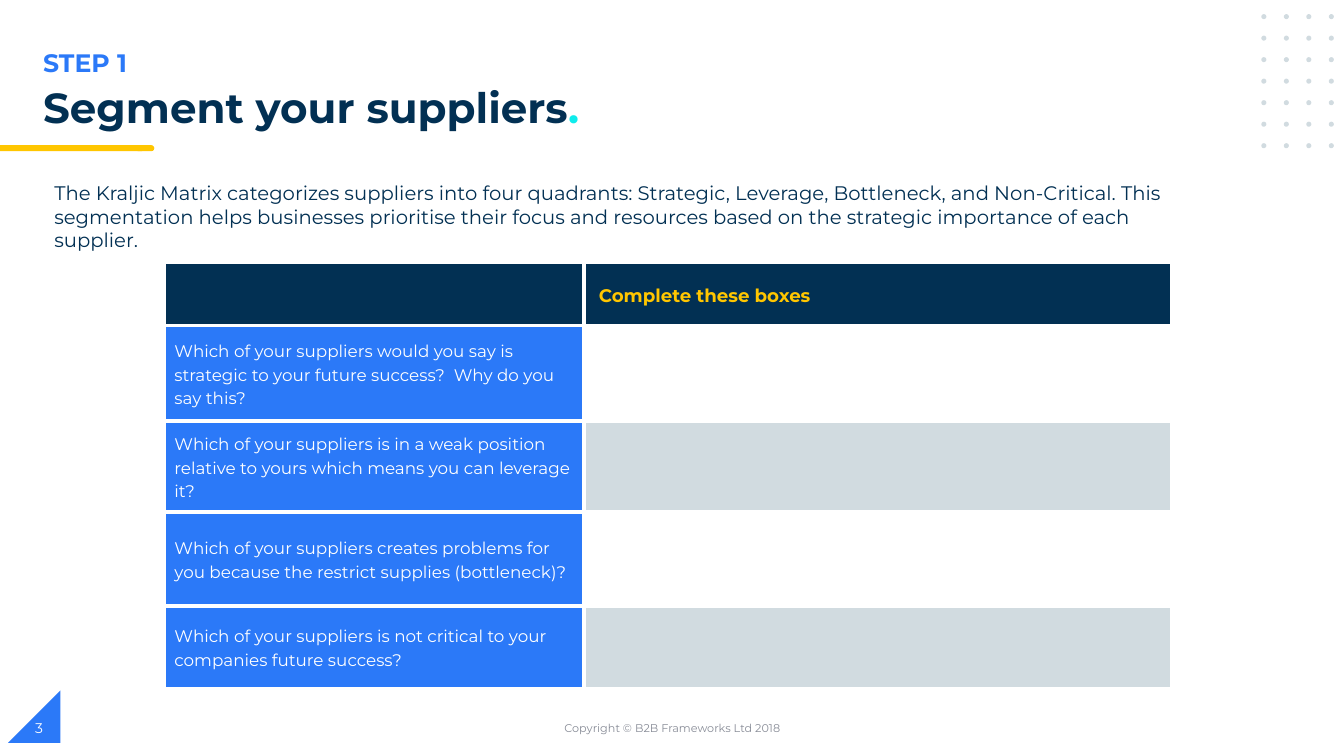
from dataclasses import dataclass

import pptx
import pptx.dml.color
import pptx.enum.shapes
import pptx.enum.text
import pptx.oxml.ns
import pptx.util
from lxml import etree

Inches = pptx.util.Inches
Pt = pptx.util.Pt
Shapes = pptx.enum.shapes.MSO_SHAPE
Align = pptx.enum.text.PP_ALIGN
Anchor = pptx.enum.text.MSO_ANCHOR

FONT = "Montserrat"
NAVY, BLUE, YELLOW = "023053", "2B79F8", "FFC600"
CYAN, GREY, PALE, WHITE = "0EECEC", "888C97", "D1DBE0", "FFFFFF"


@dataclass(frozen=True)
class Box:
    left: float
    top: float
    width: float
    height: float

    def lengths(self) -> tuple:
        return tuple(Inches(n) for n in (self.left, self.top, self.width, self.height))


@dataclass(frozen=True)
class Question:
    text: str
    height: float
    answer_fill: str


QUESTIONS = [
    Question("Which of your suppliers would you say is strategic to your future success?  "
             "Why do you say this?", 0.95, WHITE),
    Question("Which of your suppliers is in a weak position relative to yours which means "
             "you can leverage it?", 0.9, PALE),
    Question("Which of your suppliers creates problems for you because the restrict supplies "
             "(bottleneck)?", 0.93, WHITE),
    Question("Which of your suppliers is not critical to your companies future success?",
             0.82, PALE),
]
HEADER_HEIGHT = 0.63
COLUMN_WIDTHS = (4.16, 5.83)


def rgb(value: str) -> pptx.dml.color.RGBColor:
    return pptx.dml.color.RGBColor.from_string(value)


def add_run(paragraph, text: str, *, size: float, color: str, bold: bool = False) -> None:
    run = paragraph.add_run()
    run.text = text
    run.font.name = FONT
    run.font.size = Pt(size)
    run.font.bold = bold
    run.font.color.rgb = rgb(color)


def add_text(slide, box: Box, text: str, *, size: float, color: str, bold: bool = False,
             align=Align.LEFT, anchor=Anchor.TOP, line_spacing: float = 1.0):
    frame = slide.shapes.add_textbox(*box.lengths()).text_frame
    frame.word_wrap = True
    frame.vertical_anchor = anchor
    paragraph = frame.paragraphs[0]
    paragraph.alignment = align
    paragraph.line_spacing = line_spacing
    add_run(paragraph, text, size=size, color=color, bold=bold)
    return paragraph


def add_filled_shape(slide, kind, box: Box, color: str):
    shape = slide.shapes.add_shape(kind, *box.lengths())
    shape.shadow.inherit = False
    shape.fill.solid()
    shape.fill.fore_color.rgb = rgb(color)
    shape.line.fill.background()
    return shape


def format_cell(cell, fill: str) -> None:
    """Give a cell white borders and a solid fill."""
    qn = pptx.oxml.ns.qn
    properties = cell._tc.get_or_add_tcPr()
    for side in ("lnL", "lnR", "lnT", "lnB"):
        border = etree.SubElement(properties, qn(f"a:{side}"), w=str(Pt(3)))
        solid = etree.SubElement(border, qn("a:solidFill"))
        etree.SubElement(solid, qn("a:srgbClr"), val=WHITE)
    cell.fill.solid()
    cell.fill.fore_color.rgb = rgb(fill)


def write_cell(cell, text: str, *, size: float, color: str, bold: bool = False,
               indent: float = 0.1) -> None:
    cell.vertical_anchor = Anchor.MIDDLE
    cell.margin_left, cell.margin_right = Inches(indent), Inches(0.1)
    cell.margin_top = cell.margin_bottom = 0
    paragraph = cell.text_frame.paragraphs[0]
    paragraph.line_spacing = 1.15
    add_run(paragraph, text, size=size, color=color, bold=bold)


def add_question_table(slide) -> None:
    heights = [HEADER_HEIGHT] + [question.height for question in QUESTIONS]
    box = Box(1.63, 2.6, sum(COLUMN_WIDTHS), sum(heights))
    table = slide.shapes.add_table(len(heights), len(COLUMN_WIDTHS), *box.lengths()).table
    table.horz_banding = False
    for column, width in zip(table.columns, COLUMN_WIDTHS):
        column.width = Inches(width)
    for row, height in zip(table.rows, heights):
        row.height = Inches(height)

    for cell in table.rows[0].cells:
        format_cell(cell, NAVY)
    write_cell(table.cell(0, 1), "Complete these boxes", size=13, color=YELLOW,
               bold=True, indent=0.15)
    for index, question in enumerate(QUESTIONS, start=1):
        format_cell(table.cell(index, 0), BLUE)
        format_cell(table.cell(index, 1), question.answer_fill)
        write_cell(table.cell(index, 0), question.text, size=12, color=WHITE)


def add_decoration(slide) -> None:
    # Page number corner
    corner = add_filled_shape(slide, Shapes.RIGHT_TRIANGLE, Box(0.08, 6.85, 0.52, 0.52), BLUE)
    corner._element.spPr.xfrm.set("flipH", "1")
    # Title underline with a rounded end
    add_filled_shape(slide, Shapes.FLOWCHART_TERMINATOR, Box(1.34, 1.44, 0.19, 0.06), YELLOW)
    add_filled_shape(slide, Shapes.RECTANGLE, Box(0, 1.44, 1.41, 0.06), YELLOW)
    # Dot grid
    for row in range(7):
        for column in range(4):
            dot = Box(12.51 + 0.223 * column, 0.14 + 0.2135 * row, 0.05, 0.05)
            add_filled_shape(slide, Shapes.OVAL, dot, PALE)


def main() -> None:
    presentation = pptx.Presentation()
    presentation.slide_width = Inches(13.33)
    presentation.slide_height = Inches(7.5)
    slide = presentation.slides.add_slide(presentation.slide_layouts[6])

    add_decoration(slide)

    # Heading
    add_text(slide, Box(0.33, 0.42, 6.69, 0.4), "STEP 1", size=18, color=BLUE, bold=True)
    title = add_text(slide, Box(0.33, 0.82, 7.76, 0.4), "Segment your suppliers",
                     size=30, color=NAVY, bold=True, line_spacing=0.9)
    add_run(title, ".", size=30, color=CYAN, bold=True)

    # Body
    add_text(slide, Box(0.44, 1.75, 11.74, 0.57),
             "The Kraljic Matrix categorizes suppliers into four quadrants: Strategic, "
             "Leverage, Bottleneck, and Non-Critical. This segmentation helps businesses "
             "prioritise their focus and resources based on the strategic importance of "
             "each supplier.", size=14, color=NAVY)
    add_question_table(slide)

    # Footer
    add_text(slide, Box(4.42, 7.02, 4.5, 0.4), "Copyright © B2B Frameworks Ltd 2018",
             size=8, color=GREY, align=Align.CENTER, anchor=Anchor.MIDDLE)
    add_text(slide, Box(0.25, 7.02, 3, 0.4), "3", size=10, color=WHITE, anchor=Anchor.MIDDLE)

    presentation.save("out.pptx")


if __name__ == "__main__":
    main()
